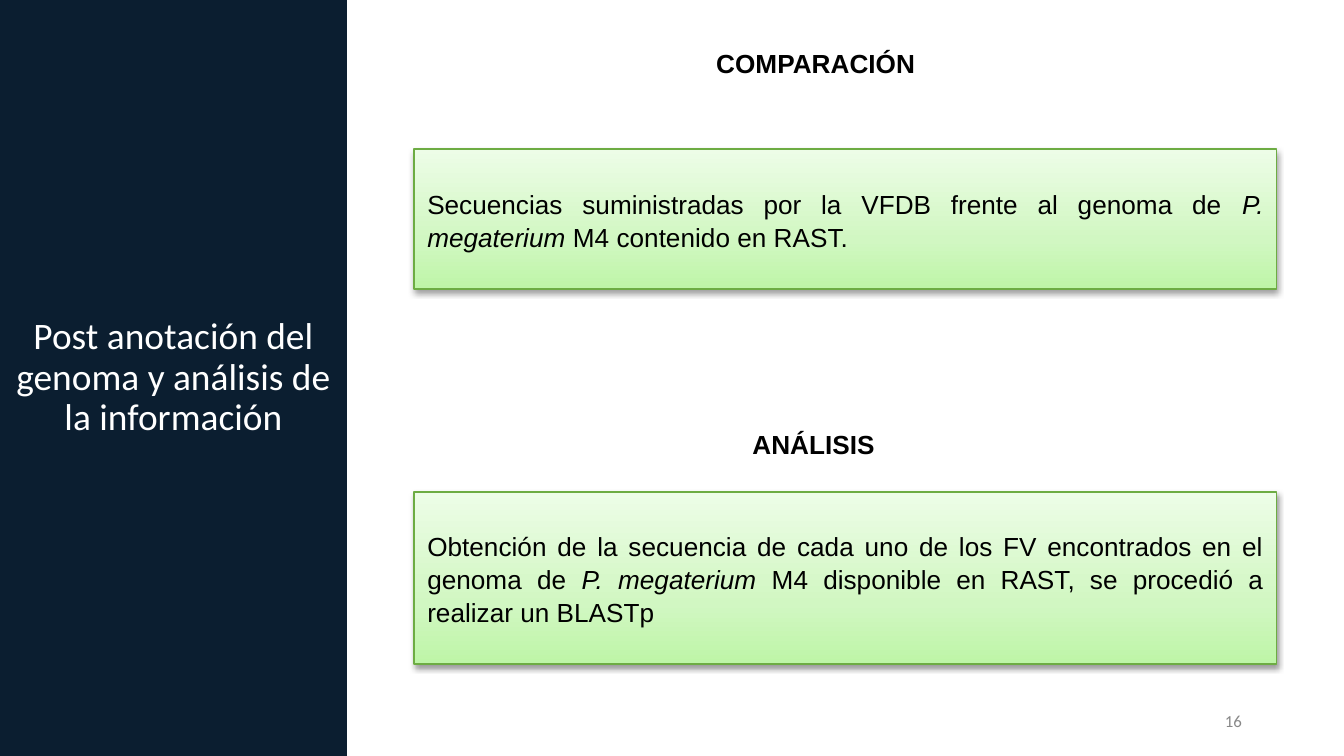
import copy

import pptx
import pptx.dml.color
import pptx.enum.shapes
import pptx.enum.text
import pptx.oxml
import pptx.util
from pptx.util import Pt

RGB = pptx.dml.color.RGBColor
NAVY = RGB(0x0B, 0x1E, 0x30)
WHITE = RGB(0xFF, 0xFF, 0xFF)
BLACK = RGB(0x00, 0x00, 0x00)
GRAY = RGB(0x88, 0x88, 0x88)
GREEN_LINE = RGB(0x6D, 0xAC, 0x43)
GREEN_STOPS = [
    (0, RGB(0xBE, 0xF5, 0xA7)),
    (0.35, RGB(0xD1, 0xF7, 0xC2)),
    (1, RGB(0xED, 0xFD, 0xE7)),
]
SHADOW = (
    '<a:effectLst xmlns:a="http://schemas.openxmlformats.org/drawingml/2006/main">'
    '<a:outerShdw blurRad="40000" dist="20000" dir="5400000" rotWithShape="0">'
    '<a:srgbClr val="000000"><a:alpha val="38000"/></a:srgbClr>'
    "</a:outerShdw></a:effectLst>"
)
ALIGN = pptx.enum.text.PP_ALIGN
ANCHOR = pptx.enum.text.MSO_ANCHOR


def add_run(p, text, color, **font):
    r = p.add_run()
    r.text = text
    r.font.color.rgb = color
    for name, value in font.items():
        setattr(r.font, name, value)


def format_frame(tf, anchor, x_inset, top, bottom):
    settings = {
        "word_wrap": True,
        "auto_size": pptx.enum.text.MSO_AUTO_SIZE.NONE,
        "vertical_anchor": anchor,
        "margin_left": Pt(x_inset),
        "margin_right": Pt(x_inset),
        "margin_top": Pt(top),
        "margin_bottom": Pt(bottom),
    }
    for name, value in settings.items():
        setattr(tf, name, value)


prs = pptx.Presentation()
prs.slide_width, prs.slide_height = Pt(720), Pt(405)
s = prs.slides.add_slide(prs.slide_layouts[5])

# Sidebar title
title = s.shapes.title
title.left, title.top, title.width, title.height = Pt(0), Pt(-1), Pt(185.8), Pt(407)
title.fill.solid()
title.fill.fore_color.rgb = NAVY
format_frame(title.text_frame, ANCHOR.MIDDLE, 2, 2, 2)
p = title.text_frame.paragraphs[0]
p.alignment = ALIGN.CENTER
p.line_spacing = 0.9
add_run(p, "Post anotación del genoma y análisis de la información", WHITE,
        name="Calibri", size=Pt(20))

# Green panels: top, height, (text, italic) runs
panels = [
    (79.9, 74.9, [
        ("Secuencias suministradas por la VFDB frente al genoma de ", False),
        ("P. megaterium ", True),
        ("M4 contenido en RAST.", False),
    ]),
    (263.5, 92.2, [
        ("Obtención de la secuencia de cada uno de los FV encontrados en el genoma de ", False),
        ("P. megaterium ", True),
        ("M4 disponible en RAST, se procedió a realizar un BLASTp", False),
    ]),
]
for top, height, runs in panels:
    sp = s.shapes.add_shape(pptx.enum.shapes.MSO_SHAPE.RECTANGLE,
                            Pt(221.8), Pt(top), Pt(462.2), Pt(height))
    sp.fill.gradient()
    sp.fill.gradient_angle = 90
    first_stop = sp._element.spPr.find(".//" + pptx.oxml.ns.qn("a:gs"))
    first_stop.addnext(copy.deepcopy(first_stop))
    for stop, (position, color) in zip(sp.fill.gradient_stops, GREEN_STOPS):
        stop.position = position
        stop.color.rgb = color
    sp.line.color.rgb = GREEN_LINE
    sp.line.width = Pt(0.75)
    sp._element.spPr.append(pptx.oxml.parse_xml(SHADOW))
    format_frame(sp.text_frame, ANCHOR.TOP, 7.2, 20, 3.6)
    p = sp.text_frame.paragraphs[0]
    p.alignment = ALIGN.JUSTIFY
    p.line_spacing = 1.05
    for text, italic in runs:
        add_run(p, text, BLACK, name="Arial", size=Pt(14), italic=italic)

# Panel headings
for text, left, top in [("COMPARACIÓN", 376.6, 21.6), ("ANÁLISIS", 396, 226.1)]:
    sp = s.shapes.add_textbox(Pt(left), Pt(top), Pt(173.5), Pt(24.5))
    format_frame(sp.text_frame, ANCHOR.TOP, 7.2, 3.6, 3.6)
    add_run(sp.text_frame.paragraphs[0], text, BLACK,
            name="Arial", size=Pt(14), bold=True)

# Slide number
sp = s.shapes.add_textbox(Pt(508.3), Pt(375.1), Pt(162), Pt(21.6))
format_frame(sp.text_frame, ANCHOR.MIDDLE, 5, 3, 3)
p = sp.text_frame.paragraphs[0]
p.alignment = ALIGN.RIGHT
add_run(p, "16", GRAY, name="Calibri", size=Pt(9))

prs.save("out.pptx")
